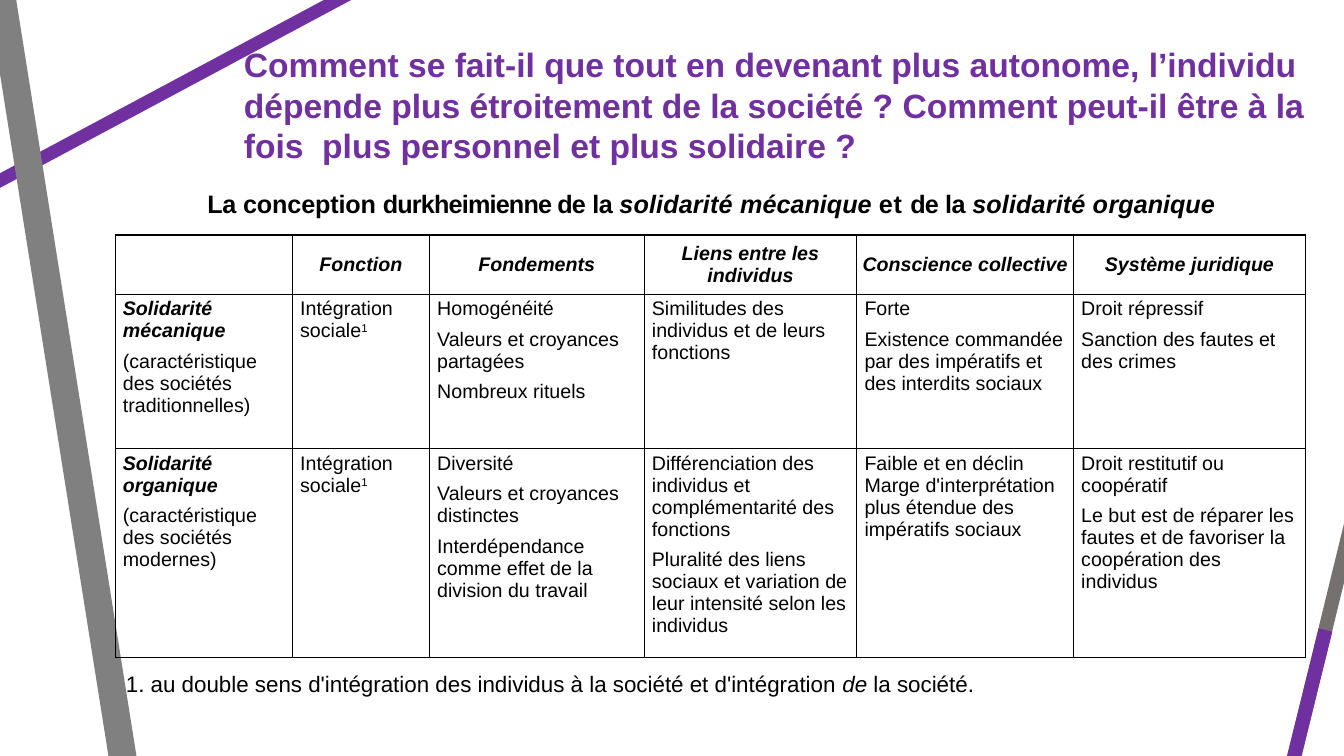
from pptx import Presentation
from pptx.dml.color import RGBColor
from pptx.enum import shapes, text
from pptx.oxml.ns import qn
from pptx.util import Pt
from lxml import etree

PURPLE, BLACK = "7030A0", "000000"


def write(para, runs, size, color=BLACK):
    """Add (text, style, spacing) runs; style holds b, i or ^ for superscript."""
    for words, style, gap in runs:
        run = para.add_run()
        run.text = words
        font = run.font
        font.name, font.size = "Arial", Pt(size)
        font.bold, font.italic = "b" in style, "i" in style
        font.color.rgb = RGBColor.from_string(color)
        props = run._r.get_or_add_rPr()
        if gap:
            props.set("spc", str(round(gap * 100)))
        if "^" in style:
            props.set("baseline", "30000")


def border(cell):
    props = cell._tc.get_or_add_tcPr()
    for side in ("lnL", "lnR", "lnT", "lnB"):
        edge = etree.SubElement(props, qn("a:" + side), w=str(Pt(1)))
        fill = etree.SubElement(edge, qn("a:solidFill"))
        etree.SubElement(fill, qn("a:srgbClr"), val=BLACK)


deck = Presentation()
deck.slide_width, deck.slide_height = Pt(960), Pt(540)
slide = deck.slides.add_slide(deck.slide_layouts[5])

# Decorative lines: start, end, colour, width
bars = [
    (-150.5, 209.5, 371.5, -69.8, PURPLE, 9.25),
    (0, -10, 90.7, 560.2, "808080", 19.75),
    (882.7, 712, 982.8, 301.7, "767171", 10),
    (877, 730.8, 946.8, 450, PURPLE, 10),
]
for x1, y1, x2, y2, color, width in bars:
    bar = slide.shapes.add_connector(
        shapes.MSO_CONNECTOR.STRAIGHT, Pt(x1), Pt(y1), Pt(x2), Pt(y2))
    bar.line.color.rgb = RGBColor.from_string(color)
    bar.line.width = Pt(width)
    etree.SubElement(bar._element.spPr, qn("a:effectLst"))

# Title
title = slide.shapes.title
title.left, title.top, title.width, title.height = Pt(167), Pt(28), Pt(783.4), Pt(94.3)
frame = title.text_frame
frame.word_wrap = True
frame.auto_size = text.MSO_AUTO_SIZE.SHAPE_TO_FIT_TEXT
frame.vertical_anchor = text.MSO_ANCHOR.TOP
para = frame.paragraphs[0]
para.alignment = text.PP_ALIGN.LEFT
para.space_before = Pt(6)
write(para, [("Comment se fait-il que tout en devenant plus autonome, l’individu "
              "dépende plus étroitement de la société ? Comment peut-il être à la "
              "fois  plus personnel et plus solidaire ?", "b", 0)], 24, PURPLE)

# Comparison table: each cell is a list of paragraphs
heads = ["", "Fonction", "Fondements", "Liens entre les individus",
         "Conscience collective", "Système juridique"]
rows = [
    [["Solidarité mécanique", "(caractéristique des sociétés traditionnelles)"],
     ["Intégration sociale"],
     ["Homogénéité", "Valeurs et croyances partagées", "Nombreux rituels"],
     ["Similitudes des individus et de leurs fonctions"],
     ["Forte", "Existence commandée par des impératifs et des interdits sociaux"],
     ["Droit répressif", "Sanction des fautes et des crimes"]],
    [["Solidarité organique", "(caractéristique des sociétés modernes)"],
     ["Intégration sociale"],
     ["Diversité", "Valeurs et croyances distinctes",
      "Interdépendance comme effet de la division du travail"],
     ["Différenciation des individus et complémentarité des fonctions",
      "Pluralité des liens sociaux et variation de leur intensité selon les individus"],
     ["Faible et en déclin Marge d'interprétation plus étendue des impératifs sociaux"],
     ["Droit restitutif ou coopératif",
      "Le but est de réparer les fautes et de favoriser la coopération des individus"]],
]
grid = [[[head] for head in heads]] + rows
table = slide.shapes.add_table(
    3, 6, Pt(82.3), Pt(167.8), Pt(850.3), Pt(301.7)).table
table.first_row = table.horz_banding = False
for col, width in zip(table.columns, (126.6, 97.9, 153.4, 151.9, 154.8, 165.7)):
    col.width = Pt(width)
for row, height in zip(table.rows, (42.4, 110.3, 149)):
    row.height = Pt(height)

for r, line in enumerate(grid):
    for c, items in enumerate(line):
        cell = table.cell(r, c)
        border(cell)
        cell.fill.background()
        cell.margin_left = cell.margin_right = Pt(2.7)
        cell.margin_top = cell.margin_bottom = Pt(2.7)
        cell.vertical_anchor = text.MSO_ANCHOR.TOP if r else text.MSO_ANCHOR.MIDDLE
        for n, words in enumerate(items):
            frame = cell.text_frame
            para = frame.add_paragraph() if n else frame.paragraphs[0]
            if r:
                para.space_before = para.space_after = Pt(3)
                para._p.get_or_add_pPr().set("marL", str(Pt(2.8)))
            else:
                para.alignment = text.PP_ALIGN.CENTER
            if words:
                strong = r == 0 or (c == 0 and n == 0)
                write(para, [(words, "bi" if strong else "", 0)], 14)
            if r and c == 1:
                write(para, [("1", "^", 0)], 14)

# Table caption and footnote
caption = [
    ("La ", "b", -0.2), ("conception ", "b", -0.1), ("durkheimienne de ", "b", -0.6),
    ("la ", "b", -0.3), ("solidarité ", "bi", 0.1), ("mécanique ", "bi", 0),
    ("et ", "b", 0.5), ("de ", "b", -0.6), ("la ", "b", -0.3),
    ("solidarité o", "bi", 0.1), ("rganique", "bi", 0),
]
note = [
    ("1. au double sens d'intégration des individus à la société et d'intégration ", "", 0),
    ("de ", "i", 0), ("la société.", "", 0),
]
labels = [
    (131, 850.3, 28.8, caption, 18, text.PP_ALIGN.CENTER, True),
    (475.2, 627.1, 26.6, note, 16, text.PP_ALIGN.LEFT, False),
]
for top, width, height, runs, size, align, wrap in labels:
    box = slide.shapes.add_textbox(Pt(82.8), Pt(top), Pt(width), Pt(height))
    frame = box.text_frame
    frame.word_wrap = wrap
    frame.auto_size = text.MSO_AUTO_SIZE.SHAPE_TO_FIT_TEXT
    frame.paragraphs[0].alignment = align
    write(frame.paragraphs[0], runs, size)

deck.save("out.pptx")
